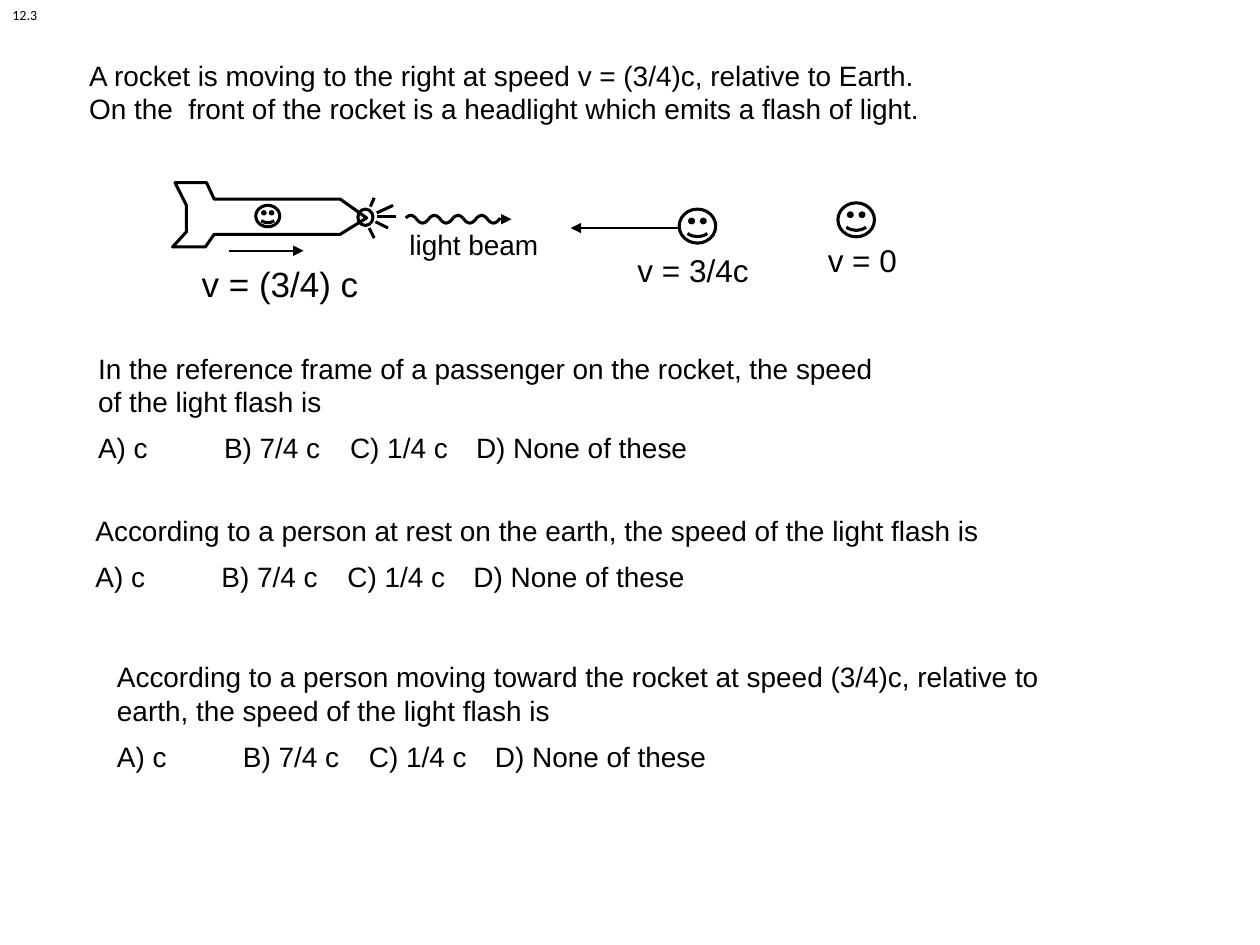
from math import pi, sin

from lxml import etree
from pptx import Presentation
from pptx.dml.color import RGBColor
from pptx.enum.shapes import MSO_CONNECTOR, MSO_SHAPE
from pptx.enum.text import MSO_ANCHOR
from pptx.oxml.ns import qn
from pptx.util import Inches, Pt

BLACK = RGBColor(0, 0, 0)
STRAIGHT = MSO_CONNECTOR.STRAIGHT
SMILEY, OVAL = MSO_SHAPE.SMILEY_FACE, MSO_SHAPE.OVAL
TOP, MIDDLE = MSO_ANCHOR.TOP, MSO_ANCHOR.MIDDLE
OUTLINE = 1.75

# Content: boxes are left, top, width, height in inches
SLIDE_NUMBER = "12.3"
INTRO = ("A rocket is moving to the right at speed v = (3/4)c, relative to Earth.  "
         "On the  front of the rocket is a headlight which emits a flash of light.")
ANSWERS = "A) c\tB) 7/4 c\tC) 1/4 c \tD) None of these"
ANSWER_TABS = (1, 2, 3)
QUESTIONS = [
    ("In the reference frame of a passenger on the rocket, the speed of the light flash is",
     (0.68, 2.73, 6.55, 1.01)),
    ("According to a person at rest on the earth, the speed of the light flash is",
     (0.66, 4.02, 7.24, 0.74)),
    ("According to a person moving toward the rocket at speed (3/4)c, relative to earth, "
     "the speed of the light flash is", (0.83, 5.18, 8.11, 1.01)),
]
LABELS = [
    ("v = (3/4) c", 20, (1.6, 2.08, 1.38, 0.39)),
    ("light beam", 16, (3.25, 1.81, 1.03, 0.34)),
    ("v = 3/4c", 18, (5.06, 1.99, 0.97, 0.26)),
    ("v = 0", 18, (6.57, 1.91, 0.66, 0.26)),
]
ROCKET = [(1.39, 1.45), (1.48, 1.63), (1.48, 1.84), (1.37, 1.96), (1.63, 1.96), (1.7, 1.86),
          (2.7, 1.86), (2.91, 1.73), (2.7, 1.58), (1.7, 1.58), (1.64, 1.45)]
ROUND_PARTS = [
    (SMILEY, (2.03, 1.63, 0.19, 0.17)),  # passenger
    (OVAL, (2.84, 1.66, 0.12, 0.13)),    # headlight
    (SMILEY, (5.39, 1.66, 0.29, 0.27)),  # moving observer
    (SMILEY, (6.65, 1.61, 0.29, 0.27)),  # observer at rest
]
HEADLIGHT_RAYS = [
    ((2.94, 1.64), (2.97, 1.57)), ((2.99, 1.69), (3.12, 1.63)), ((2.99, 1.72), (3.14, 1.72)),
    ((2.98, 1.76), (3.08, 1.81)), ((2.93, 1.81), (2.97, 1.89)),
]
ARROWS = [
    ((1.82, 1.99), (2.41, 1.99), 1.25),     # rocket velocity
    ((3.99, 1.74), (4.06, 1.74), OUTLINE),  # tip of the light beam
    ((5.39, 1.81), (4.53, 1.81), 1),        # observer velocity
]
# Light beam: crests and troughs in turn, joined by short lines
BEAM_START, BEAM_END, BEAM_Y = 3.22, 3.97, 1.74
HUMPS, HUMP_WIDTH, HUMP_HEIGHT, HALF_GAP = 8, 0.08, 0.02, 0.01
HUMP_STEPS = 12

prs = Presentation()
prs.slide_width, prs.slide_height = Inches(10), Inches(7.5)
shapes = prs.slides.add_slide(prs.slide_layouts[6]).shapes


def add_text(paragraphs, box, size, font="Arial", inset=True, anchor=TOP, wrap=True):
    frame = shapes.add_textbox(*map(Inches, box)).text_frame
    frame.word_wrap = wrap
    frame.vertical_anchor = anchor
    if not inset:
        frame.margin_left = frame.margin_right = frame.margin_top = frame.margin_bottom = 0
    frame.text = "\n".join(paragraphs)
    for paragraph in frame.paragraphs:
        paragraph.font.size = Pt(size)
        paragraph.font.name = font
        paragraph.font.color.rgb = BLACK
    return frame


def outline(part):
    part.shadow.inherit = False
    part.fill.background()
    part.line.color.rgb = BLACK
    part.line.width = Pt(OUTLINE)


def add_path(points, closed):
    corners = [(Inches(x), Inches(y)) for x, y in points]
    builder = shapes.build_freeform(*corners[0])
    builder.add_line_segments(corners[1:], close=closed)
    outline(builder.convert_to_shape())


def add_line(start, end, width=OUTLINE, arrow=False):
    line = shapes.add_connector(STRAIGHT, *map(Inches, start + end))
    line.line.color.rgb = BLACK
    line.line.width = Pt(width)
    properties = line._element.spPr
    if arrow:
        etree.SubElement(properties.find(qn("a:ln")), qn("a:tailEnd"), type="triangle")
    etree.SubElement(properties, qn("a:effectLst"))


def set_tabs(paragraph, positions):
    properties = paragraph._p.get_or_add_pPr()
    tabs = etree.Element(qn("a:tabLst"))
    for position in positions:
        etree.SubElement(tabs, qn("a:tab"), pos=str(Inches(position)), algn="l")
    # Tab stops come before the paragraph's default run properties
    properties.find(qn("a:defRPr")).addprevious(tabs)


# Number and introduction
add_text([SLIDE_NUMBER], (0, 0, 0.4, 0.24), 8, font="Calibri", wrap=False)
add_text([INTRO], (0.61, 0.415, 6.82, 0.94), 16)

# Rocket, faces, headlight and arrows
add_path(ROCKET, closed=True)
for kind, box in ROUND_PARTS:
    outline(shapes.add_shape(kind, *map(Inches, box)))
for start, end in HEADLIGHT_RAYS:
    add_line(start, end)
for start, end, width in ARROWS:
    add_line(start, end, width, arrow=True)

# Light beam
pitch = (BEAM_END - BEAM_START) / HUMPS
for hump in range(HUMPS):
    left = BEAM_START + hump * pitch
    side = 1 if hump % 2 else -1  # crests first, then troughs
    edge = BEAM_Y + side * HALF_GAP
    steps = [i / HUMP_STEPS for i in range(HUMP_STEPS + 1)]
    add_path([(left + HUMP_WIDTH * t, edge + side * HUMP_HEIGHT * sin(pi * t))
              for t in steps], closed=False)
    add_line((left + HUMP_WIDTH, edge), (left + pitch, BEAM_Y - side * HALF_GAP))

for label, size, box in LABELS:
    add_text([label], box, size, inset=False)

# Questions, each with the same answers
for question, box in QUESTIONS:
    answers = add_text([question, ANSWERS], box, 16, anchor=MIDDLE).paragraphs[1]
    answers.space_before = Pt(7)
    set_tabs(answers, ANSWER_TABS)

prs.save("out.pptx")
